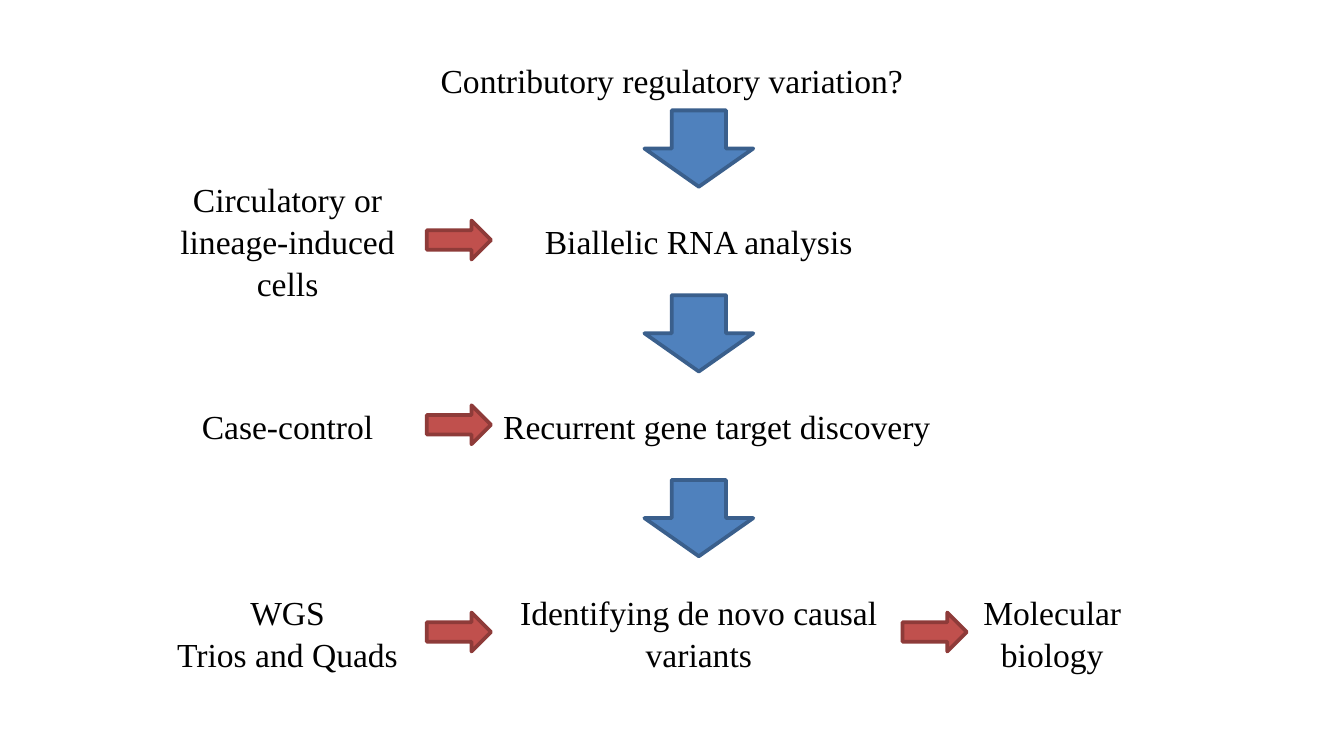
from dataclasses import dataclass

from pptx import Presentation
from pptx.dml.color import RGBColor
from pptx.enum.shapes import MSO_SHAPE as Preset
from pptx.enum.text import MSO_ANCHOR as Anchor, MSO_AUTO_SIZE as AutoSize, PP_ALIGN as Align
from pptx.util import Inches, Pt


@dataclass(frozen=True)
class Theme:
    font: str = "Times New Roman"
    size: float = 18
    spacing: float = 1.05
    ink: str = "000000"
    step: tuple = ("4F81BD", "3A5F8C")
    feed: tuple = ("C0504D", "8E3B39")
    outline: float = 2


theme = Theme()
presentation = Presentation()
presentation.slide_width = Inches(10)
presentation.slide_height = Inches(5.625)
column = presentation.slide_width / 100
row = presentation.slide_height / 100
slide = presentation.slides.add_slide(presentation.slide_layouts[5])


def frame(center_x, center_y, width, height):
    return [round(length) for length in (
        (center_x - width / 2) * column, (center_y - height / 2) * row,
        width * column, height * row)]


def write(text, box, shape=None, margin=0.07, size=theme.size, color=theme.ink):
    shape = shape or slide.shapes.add_textbox(*box)
    shape.left, shape.top, shape.width, shape.height = box
    text_frame = shape.text_frame
    text_frame.text = text
    text_frame.word_wrap = True
    text_frame.auto_size = AutoSize.NONE
    text_frame.vertical_anchor = Anchor.MIDDLE
    text_frame.margin_left = text_frame.margin_right = Inches(margin)
    text_frame.margin_top = text_frame.margin_bottom = Inches(0.04)
    for paragraph in text_frame.paragraphs:
        paragraph.alignment = Align.CENTER
        paragraph.line_spacing = theme.spacing
        paragraph.font.name = theme.font
        paragraph.font.size = Pt(size)
        paragraph.font.color.rgb = RGBColor.from_string(color)


pitch = 24.44
method_row = 31.75
target_row = method_row + pitch
variant_row = 83.6
source_x, feed_x, step_x, outcome_x = 21.4, 34.15, 52, 78.3

write("Contributory regulatory variation?", frame(50, 10.5, 45.6, 10),
      shape=slide.shapes.title, margin=0.08)

labels = [
    ("Circulatory or lineage-induced cells", source_x, method_row, 22.5, 16.4),
    ("Biallelic RNA analysis", step_x, method_row, 45.6, 9.4),
    ("Case-control", source_x, target_row, 20, 16.4),
    ("Recurrent gene target discovery", 53.35, target_row, 38.1, 10),
    ("WGS\nTrios and Quads", source_x, variant_row, 20, 19.4),
    ("Identifying de novo causal variants", step_x, variant_row, 28.8, 22.2),
    ("Molecular\nbiology", outcome_x, variant_row, 17.6, 17.2),
]
for text, *place in labels:
    write(text, frame(*place))

step_arrows = [(step_x, 19.65 + pitch * index, 8.1, 10.1, 0, theme.step)
               for index in range(3)]
feed_places = [(feed_x, method_row), (feed_x, target_row),
               (feed_x, variant_row), (69.55, variant_row)]
feed_arrows = [(x, y, 2.9, 8.5, 270, theme.feed) for x, y in feed_places]

for *place, rotation, (fill, outline) in step_arrows + feed_arrows:
    arrow = slide.shapes.add_shape(Preset.DOWN_ARROW, *frame(*place))
    arrow.rotation = rotation
    arrow.shadow.inherit = False
    arrow.fill.solid()
    arrow.fill.fore_color.rgb = RGBColor.from_string(fill)
    arrow.line.color.rgb = RGBColor.from_string(outline)
    arrow.line.width = Pt(theme.outline)

presentation.save("out.pptx")
